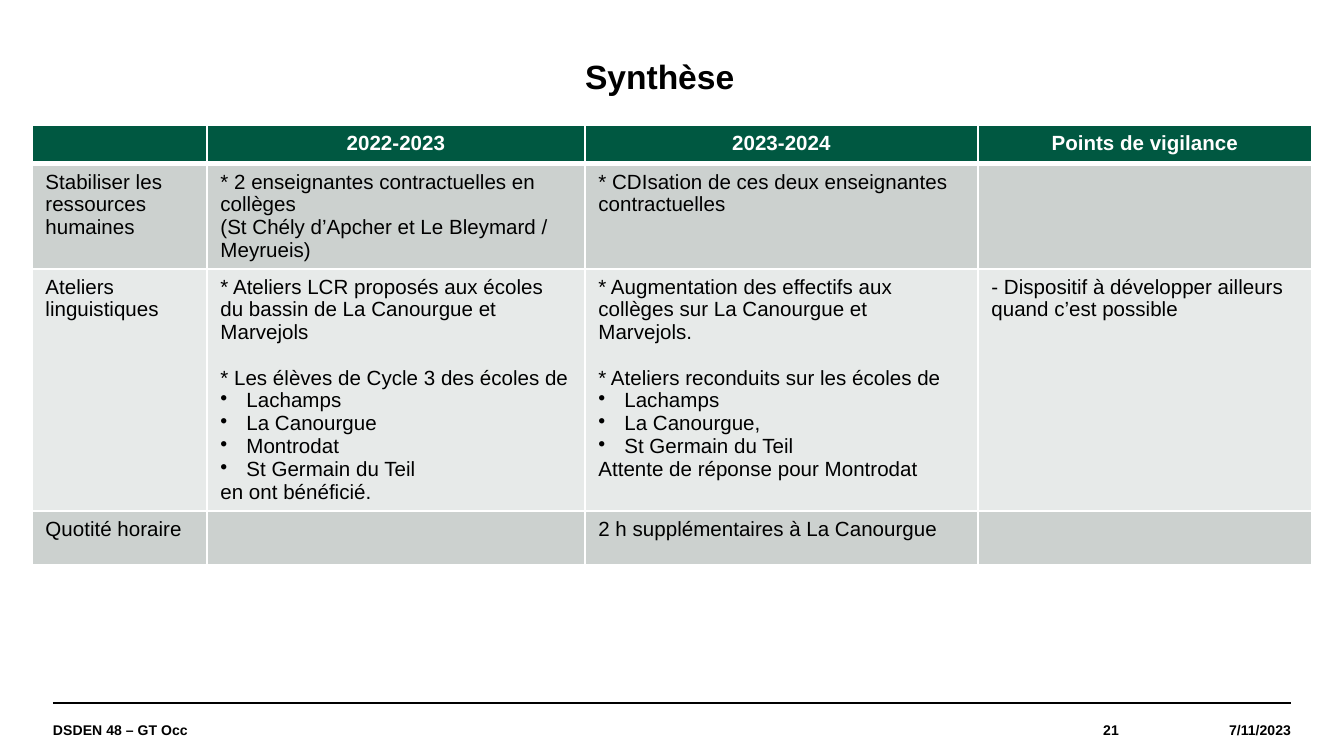
"""Build the summary slide: title, comparison table and footer."""
import pptx
import pptx.util
import pptx.dml.color
import pptx.enum.shapes
import pptx.enum.text
import pptx.oxml
import pptx.oxml.ns

SCALE = 914400 / 134.4
HUES = {"ink": "000000", "white": "FFFFFF", "head": "005841",
        "dark": "CCD1CF", "light": "E7EAE9"}
FONT = "Arial"
ALIGN = pptx.enum.text.PP_ALIGN
ANCHOR = pptx.enum.text.MSO_ANCHOR
COLS = [175, 378, 393, 334]
ROWS = [37, 105, 242, 54]
CELLS = [
    ["", "2022-2023", "2023-2024", "Points de vigilance"],
    ["Stabiliser les ressources humaines",
     "* 2 enseignantes contractuelles en collèges\n"
     "(St Chély d’Apcher et Le Bleymard / Meyrueis)",
     "* CDIsation de ces deux enseignantes contractuelles", ""],
    ["Ateliers linguistiques",
     "* Ateliers LCR proposés aux écoles du bassin de La Canourgue et Marvejols\n"
     "* Les élèves de Cycle 3 des écoles de\n"
     "•Lachamps\n•La Canourgue\n•Montrodat\n•St Germain du Teil\n"
     "en ont bénéficié.",
     "* Augmentation des effectifs aux collèges sur La Canourgue et Marvejols.\n"
     "* Ateliers reconduits sur les écoles de\n"
     "•Lachamps\n•La Canourgue,\n•St Germain du Teil\n"
     "Attente de réponse pour Montrodat",
     "- Dispositif à développer ailleurs quand c’est possible"],
    ["Quotité horaire", "", "2 h supplémentaires à La Canourgue", ""],
]
FOOT = [
    ("DSDEN 48 – GT Occ", 53, 868, ALIGN.LEFT),
    ("21", 921, 198, ALIGN.RIGHT),
    ("7/11/2023", 1119, 172, ALIGN.RIGHT),
]


def px(count):
    """Turn pixels into EMU."""
    return pptx.util.Emu(round(count * SCALE))


def tint(name):
    """Return a named colour."""
    return pptx.dml.color.RGBColor.from_string(HUES[name])


def node(tag, **attrs):
    """Make a drawing element."""
    item = pptx.oxml.parse_xml(f"<a:{tag} {pptx.oxml.ns.nsdecls('a')}/>")
    for key, value in attrs.items():
        item.set(key, str(value))
    return item


def dot(para):
    """Give a paragraph a hanging bullet."""
    props = para._p.get_or_add_pPr()
    props.set("marL", str(px(26)))
    props.set("indent", str(-px(26)))
    props.append(node("buChar", char="•"))


def write(frame, text, size=11, hue="ink", bold=False, align=ALIGN.LEFT,
          space=None):
    """Fill a frame, one paragraph a line, with a gap before later stars."""
    for rank, line in enumerate(text.split("\n")):
        para = frame.add_paragraph() if rank else frame.paragraphs[0]
        if line.startswith("•"):
            dot(para)
        para.alignment = align
        para.line_spacing = space
        if rank and line.startswith("*"):
            para.space_before = pptx.util.Pt(12)
        if not line:
            para._p.append(node("endParaRPr", sz=size * 100))
            continue
        run = para.add_run()
        run.text = line.lstrip("•")
        font = run.font
        font.name, font.size, font.bold = FONT, pptx.util.Pt(size), bold
        font.color.rgb = tint(hue)


def place(shape, left, top, width, height):
    """Move and size a shape."""
    shape.left, shape.top = px(left), px(top)
    shape.width, shape.height = px(width), px(height)


def clear(frame, anchor):
    """Drop the margins of a frame and anchor its text."""
    frame.margin_left = frame.margin_right = 0
    frame.margin_top = frame.margin_bottom = 0
    frame.word_wrap = True
    frame.auto_size = pptx.enum.text.MSO_AUTO_SIZE.NONE
    frame.vertical_anchor = anchor


def add_title(slide, text):
    """Set the title."""
    title = slide.shapes.title
    place(title, 585, 60, 175, 36)
    clear(title.text_frame, ANCHOR.TOP)
    write(title.text_frame, text, size=18, bold=True, space=0.9)


def edge(cell, side, width):
    """Draw one white cell border."""
    line = node(f"ln{side}", w=pptx.util.Pt(width))
    fill = node("solidFill")
    fill.append(node("srgbClr", val=HUES["white"]))
    line.append(fill)
    cell._tc.get_or_add_tcPr().append(line)


def add_grid(slide):
    """Add the comparison table."""
    grid = slide.shapes.add_table(
        len(ROWS), len(COLS), px(32), px(125), px(sum(COLS)), px(sum(ROWS))).table
    for col, width in zip(grid.columns, COLS):
        col.width = px(width)
    for rank, (row, height) in enumerate(zip(grid.rows, ROWS)):
        row.height = px(height)
        head = rank == 0
        back = "head" if head else "dark" if rank % 2 else "light"
        look = ({"hue": "white", "bold": True, "align": ALIGN.CENTER}
                if head else {})
        for cell, text in zip(row.cells, CELLS[rank]):
            for side in "LRTB":
                thick = (side == "B" and head) or (side == "T" and rank == 1)
                edge(cell, side, 3 if thick else 1)
            cell.fill.solid()
            cell.fill.fore_color.rgb = tint(back)
            write(cell.text_frame, text, **look)


def add_foot(slide):
    """Add the footer rule and its three texts."""
    rule = slide.shapes.add_connector(
        pptx.enum.shapes.MSO_CONNECTOR.STRAIGHT,
        px(53), px(703), px(1291), px(703))
    rule.line.color.rgb = tint("ink")
    rule.line.width = pptx.util.Pt(0.8)
    rule._element.spPr.append(node("effectLst"))
    for text, left, width, align in FOOT:
        box = slide.shapes.add_textbox(px(left), px(703), px(width), px(53))
        clear(box.text_frame, ANCHOR.MIDDLE)
        write(box.text_frame, text, size=7.5, bold=True, align=align)


def main():
    """Build and save the slide."""
    deck = pptx.Presentation()
    deck.slide_width, deck.slide_height = px(1344), px(756)
    slide = deck.slides.add_slide(deck.slide_layouts[5])
    add_title(slide, "Synthèse")
    add_grid(slide)
    add_foot(slide)
    deck.save("out.pptx")


if __name__ == "__main__":
    main()
